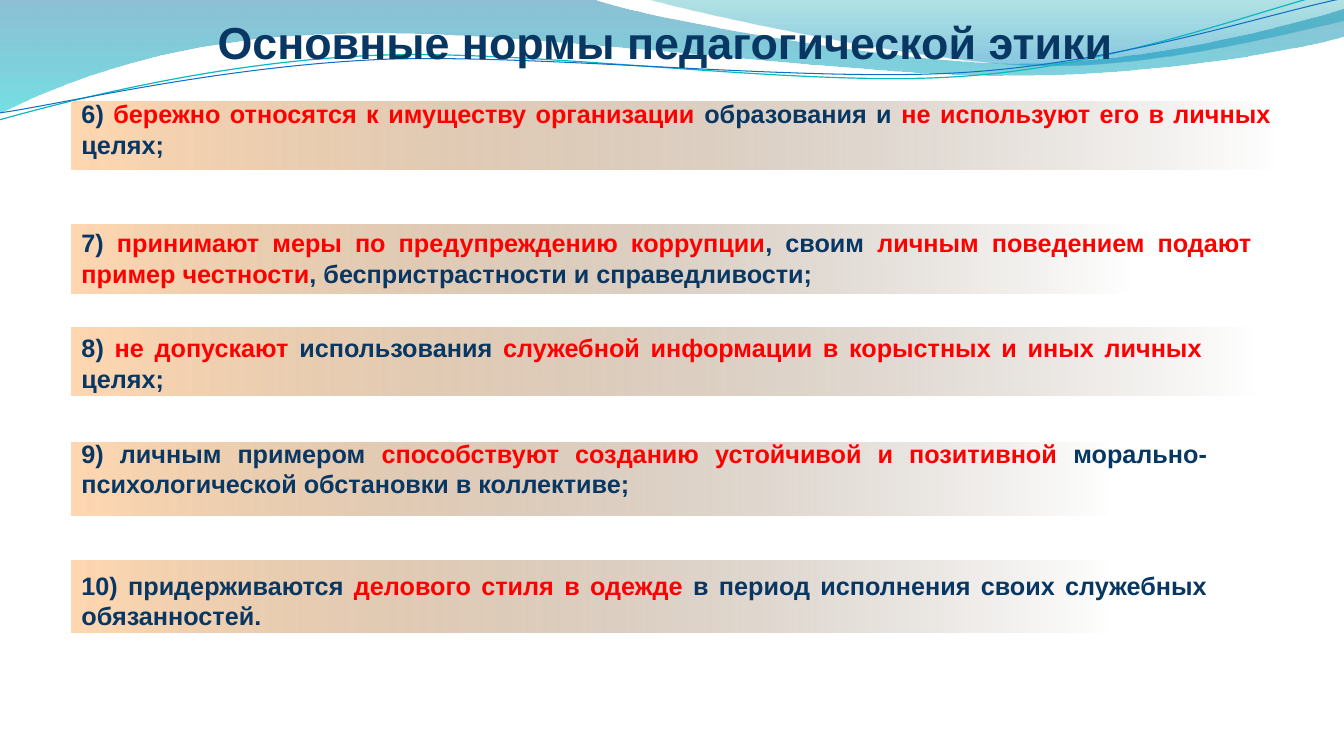
from itertools import cycle

from lxml import etree
from pptx import Presentation
from pptx.dml.color import RGBColor
from pptx.enum.shapes import MSO_SHAPE
from pptx.enum.text import MSO_AUTO_SIZE, PP_ALIGN
from pptx.oxml.ns import qn
from pptx.util import Inches, Pt

RECTANGLE = MSO_SHAPE.RECTANGLE
GROW = MSO_AUTO_SIZE.SHAPE_TO_FIT_TEXT
CENTER = PP_ALIGN.CENTER
JUSTIFY = PP_ALIGN.JUSTIFY

COLUMNS, ROWS = 13.33, 7.5
DOWN, RIGHTWARD = 270, 0
LEFT = 0.71
TEXT_HEIGHT = 0.71

COLORS = {
    "navy": "083763",
    "red": "FF0000",
    "peach": "FFD8B1",
    "brown": "766452",
    "deep_blue": "0074A1",
    "cyan": "00C6CF",
    "teal": "00A1A9",
    "sky": "008BBF",
    "line_teal": "0AB8BF",
    "line_blue": "0F6FC6",
}

BAR_STOPS = [(0, "peach", 100), (100, "brown", 0)]

WAVES = [
    ([(0, 0), (5.87, -0.01), (6.34, 0.17, 8.85, 0.63, 10.11, 0.63),
      (11.38, 0.63, 12.78, 0.26, 13.33, 0.09), (13.35, 0.36),
      (13.11, 0.44, 11.6, 0.76, 9.94, 0.75),
      (8.29, 0.75, 5.09, 0.28, 3.43, 0.34),
      (1.72, 0.36, 0.61, 0.83, -0.01, 1.13), (0, 0)],
     [(0, "deep_blue", 45), (100, "cyan", 55)]),
    ([(6.39, -0.01), (6.79, 0.11, 9.09, 0.62, 10.25, 0.65),
      (11.41, 0.69, 12.82, 0.32, 13.33, 0.21), (13.33, 0), (6.39, -0.01)],
     [(0, "teal", 30), (80, "sky", 45)]),
]

STRANDS = [
    ([(-0.01, 1.19), (0.64, 1.01, 2.11, 0.62, 3.69, 0.55),
      (5.27, 0.48, 7.9, 0.87, 9.5, 0.76),
      (11.1, 0.66, 12.52, 0.08, 13.31, -0.1)], "line_teal", 0.85),
    ([(0, 1.12), (0.63, 1.03, 2.18, 0.66, 3.78, 0.59),
      (5.37, 0.53, 7.96, 0.82, 9.55, 0.72),
      (11.15, 0.62, 12.55, 0.14, 13.34, -0.02)], "line_blue", 0.75),
]

NORMS = [
    ((1.01, 11.99, 0.67), (0.93, 11.99),
     ["6) ", "бережно относятся к имуществу организации ", "образования и ",
      "не используют его в личных ", "целях;"]),
    ((2.23, 10.55, 0.68), (2.21, 11.8),
     ["7) ", "принимают меры по предупреждению коррупции", ", своим ",
      "личным поведением подают пример честности",
      ", беспристрастности и справедливости;"]),
    ((3.25, 11.8, 0.67), (3.25, 11.31),
     ["8) ", "не допускают ", "использования ",
      "служебной информации в корыстных и иных личных ", "целях;"]),
    ((4.39, 10.34, 0.72), (4.3, 11.36),
     ["9) личным примером ", "способствуют созданию устойчивой и позитивной ",
      "морально-психологической обстановки в коллективе;"]),
    ((5.56, 10.34, 0.72), (5.61, 11.36),
     ["10) придерживаются ", "делового стиля в одежде ",
      "в период исполнения своих служебных обязанностей."]),
]


class SlideBuilder:
    font = "Arial"

    def __init__(self, deck):
        self.page = deck.slides.add_slide(deck.slide_layouts[6])
        self.column = deck.slide_width / COLUMNS
        self.row = deck.slide_height / ROWS

    def place(self, x, y):
        return round(x * self.column), round(y * self.row)

    def color(self, name):
        return RGBColor.from_string(COLORS[name])

    def gradient(self, shape, stops, angle):
        shape.fill.gradient()
        shape.fill.gradient_angle = angle
        for stop, (position, name, _) in zip(shape.fill.gradient_stops, stops):
            stop.position = position / 100
            stop.color.rgb = self.color(name)
        tints = shape.element.spPr.iter(qn("a:srgbClr"))
        for tint, (_, _, opacity) in zip(tints, stops):
            if opacity < 100:
                etree.SubElement(tint, qn("a:alpha")).set("val", str(opacity * 1000))
        shape.line.fill.background()

    def freeform(self, outline, close):
        points = [self.place(*segment[i:i + 2])
                  for segment in outline for i in range(0, len(segment), 2)]
        builder = self.page.shapes.build_freeform(*points[0])
        builder.add_line_segments(points[1:], close=close)
        shape = builder.convert_to_shape()
        shape.shadow.inherit = False
        self.bend(shape, outline[1:])
        return shape

    def bend(self, shape, segments):
        lines = iter(list(shape.element.spPr.iter(qn("a:lnTo"))))
        for segment in segments:
            curve = next(lines)
            if len(segment) == 2:
                continue
            handles = [curve, next(lines), next(lines)]
            bezier = etree.Element(qn("a:cubicBezTo"))
            curve.addprevious(bezier)
            for handle in handles:
                bezier.append(handle[0])
                handle.getparent().remove(handle)

    def wave(self, outline, stops):
        self.gradient(self.freeform(outline, True), stops, DOWN)

    def strand(self, outline, color, width):
        shape = self.freeform(outline, False)
        shape.fill.background()
        shape.line.color.rgb = self.color(color)
        shape.line.width = Pt(width)

    def bar(self, top, width, height):
        shape = self.page.shapes.add_shape(
            RECTANGLE, *self.place(LEFT, top), *self.place(width, height))
        shape.shadow.inherit = False
        self.gradient(shape, BAR_STOPS, RIGHTWARD)

    def text(self, left, top, width, height, spans, size, alignment):
        box = self.page.shapes.add_textbox(
            *self.place(left, top), *self.place(width, height))
        frame = box.text_frame
        frame.word_wrap = True
        frame.auto_size = GROW
        para = frame.paragraphs[0]
        para.alignment = alignment
        for words, color in zip(spans, cycle(("navy", "red"))):
            span = para.add_run()
            span.text = words
            span.font.name = self.font
            span.font.size = Pt(size)
            span.font.bold = True
            span.font.color.rgb = self.color(color)


def main():
    deck = Presentation()
    deck.slide_width = Inches(COLUMNS)
    deck.slide_height = Inches(ROWS)
    slide = SlideBuilder(deck)
    for outline, stops in WAVES:
        slide.wave(outline, stops)
    for outline, color, width in STRANDS:
        slide.strand(outline, color, width)
    slide.text(0.5, 0.1, 12.2, 0.64, ["Основные нормы педагогической этики"], 32, CENTER)
    for bar, (top, width), spans in NORMS:
        slide.bar(*bar)
        slide.text(LEFT, top, width, TEXT_HEIGHT, spans, 18, JUSTIFY)
    deck.save("out.pptx")


if __name__ == "__main__":
    main()
